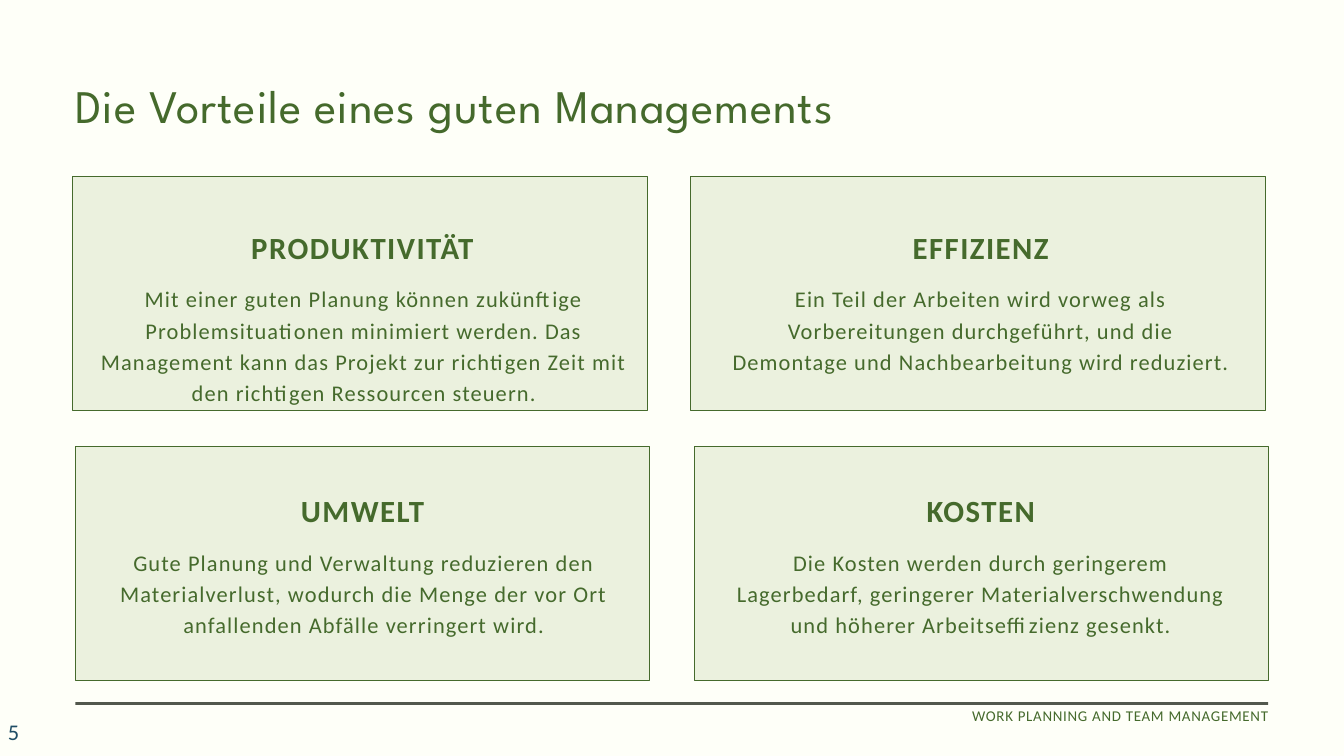
from dataclasses import dataclass

from pptx import Presentation
from pptx.dml.color import RGBColor
from pptx.enum.shapes import MSO_SHAPE
from pptx.enum.text import MSO_ANCHOR, PP_ALIGN
from pptx.util import Inches, Pt

RECT = MSO_SHAPE.RECTANGLE
LEFT, MID, RIGHT = PP_ALIGN.LEFT, PP_ALIGN.CENTER, PP_ALIGN.RIGHT
TOP, CENTER = MSO_ANCHOR.TOP, MSO_ANCHOR.MIDDLE

PAPER, GREEN, PALE = "FEFFF8", "456A2C", "EBF1DE"
GREY, BLUE = "52584D", "1E4D65"


@dataclass
class Style:
    size: float
    track: float
    lead: float | None = None
    align: PP_ALIGN = LEFT
    color: str = GREEN
    face: str = "Calibri"
    bold: bool = False


@dataclass
class Card:
    left: float
    top: float
    head_x: float
    head_y: float
    body_x: float
    body_w: float
    head: str
    body: str


TITLE = Style(50, 1, 66.8, face="League Spartan")
HEAD = Style(33, 1.6, 41.2, MID, bold=True)
BODY = Style(24, 1.2, 33.6, MID)
FOOT = Style(16, 0.8, 22.4, RIGHT)
PAGE = Style(24, 1.2, color=BLUE)

CARD_W, CARD_H, HEAD_W = 8.55, 3.48, 7.39

CARDS = [
    Card(1.12, 6.64, 1.7, 7.3, 1.33, 8.17, "UMWELT",
         "Gute Planung und Verwaltung reduzieren den Materialverlust, "
         "wodurch die Menge der vor Ort anfallenden Abfälle verringert wird."),
    Card(1.08, 2.62, 1.7, 3.38, 1.33, 8.17, "PRODUKTIVITÄT",
         "Mit einer guten Planung können zukünftige Problemsituationen "
         "minimiert werden. Das Management kann das Projekt zur richtigen "
         "Zeit mit den richtigen Ressourcen steuern."),
    Card(10.28, 2.62, 10.9, 3.38, 10.9, HEAD_W, "EFFIZIENZ",
         "Ein Teil der Arbeiten wird vorweg als Vorbereitungen durchgeführt, "
         "und die Demontage und Nachbearbeitung wird reduziert."),
    Card(10.33, 6.64, 10.9, 7.3, 10.9, HEAD_W, "KOSTEN",
         "Die Kosten werden durch geringerem Lagerbedarf, geringerer "
         "Materialverschwendung und höherer Arbeitseffizienz gesenkt."),
]


def rgb(code: str) -> RGBColor:
    return RGBColor.from_string(code)


def add_rect(slide, x: float, y: float, w: float, h: float,
             fill: str, line: str | None = None) -> None:
    box = slide.shapes.add_shape(RECT, Inches(x), Inches(y), Inches(w), Inches(h))
    box.shadow.inherit = False
    box.fill.solid()
    box.fill.fore_color.rgb = rgb(fill)
    if line:
        box.line.color.rgb = rgb(line)
        box.line.width = Pt(0.75)
    else:
        box.line.fill.background()


def add_text(slide, x: float, y: float, w: float, h: float, text: str,
             style: Style, pad: tuple[float, float] = (0, 0),
             anchor: MSO_ANCHOR = TOP) -> None:
    box = slide.shapes.add_textbox(Inches(x), Inches(y), Inches(w), Inches(h))
    frame = box.text_frame
    side, edge = Inches(pad[0]), Inches(pad[1])
    form = {"word_wrap": True, "vertical_anchor": anchor,
            "margin_left": side, "margin_right": side,
            "margin_top": edge, "margin_bottom": edge}
    for name, value in form.items():
        setattr(frame, name, value)
    par = frame.paragraphs[0]
    par.alignment = style.align
    if style.lead:
        par.line_spacing = Pt(style.lead)
    run = par.add_run()
    run.text = text
    looks = {"size": Pt(style.size), "name": style.face, "bold": style.bold}
    for name, value in looks.items():
        setattr(run.font, name, value)
    run.font.color.rgb = rgb(style.color)
    # Letter spacing is stored in hundredths of a point
    run._r.get_or_add_rPr().set("spc", str(round(style.track * 100)))


def add_card(slide, card: Card) -> None:
    add_rect(slide, card.left, card.top, CARD_W, CARD_H, PALE, GREEN)
    add_text(slide, card.head_x, card.head_y, HEAD_W, 0.56, card.head, HEAD)
    add_text(slide, card.body_x, card.head_y + 0.8, card.body_w, 1.87,
             card.body, BODY)


def main() -> None:
    deck = Presentation()
    deck.slide_width, deck.slide_height = Inches(20), Inches(11.25)
    slide = deck.slides.add_slide(deck.slide_layouts[6])
    slide.background.fill.solid()
    slide.background.fill.fore_color.rgb = rgb(PAPER)

    # Title
    add_text(slide, 1.12, 1.05, 17.71, 0.94,
             "Die Vorteile eines guten Managements", TITLE)

    # Benefit cards
    for card in CARDS:
        add_card(slide, card)

    # Footer rule, course name and page number
    add_rect(slide, 1.12, 10.45, 17.75, 0.04, GREY)
    add_text(slide, 10.56, 10.47, 8.32, 0.6,
             "WORK PLANNING AND TEAM MANAGEMENT", FOOT)
    add_text(slide, 0.02, 10.69, 2.33, 0.4, "5", PAGE, (0.1, 0.05), CENTER)

    deck.save("out.pptx")


if __name__ == "__main__":
    main()
